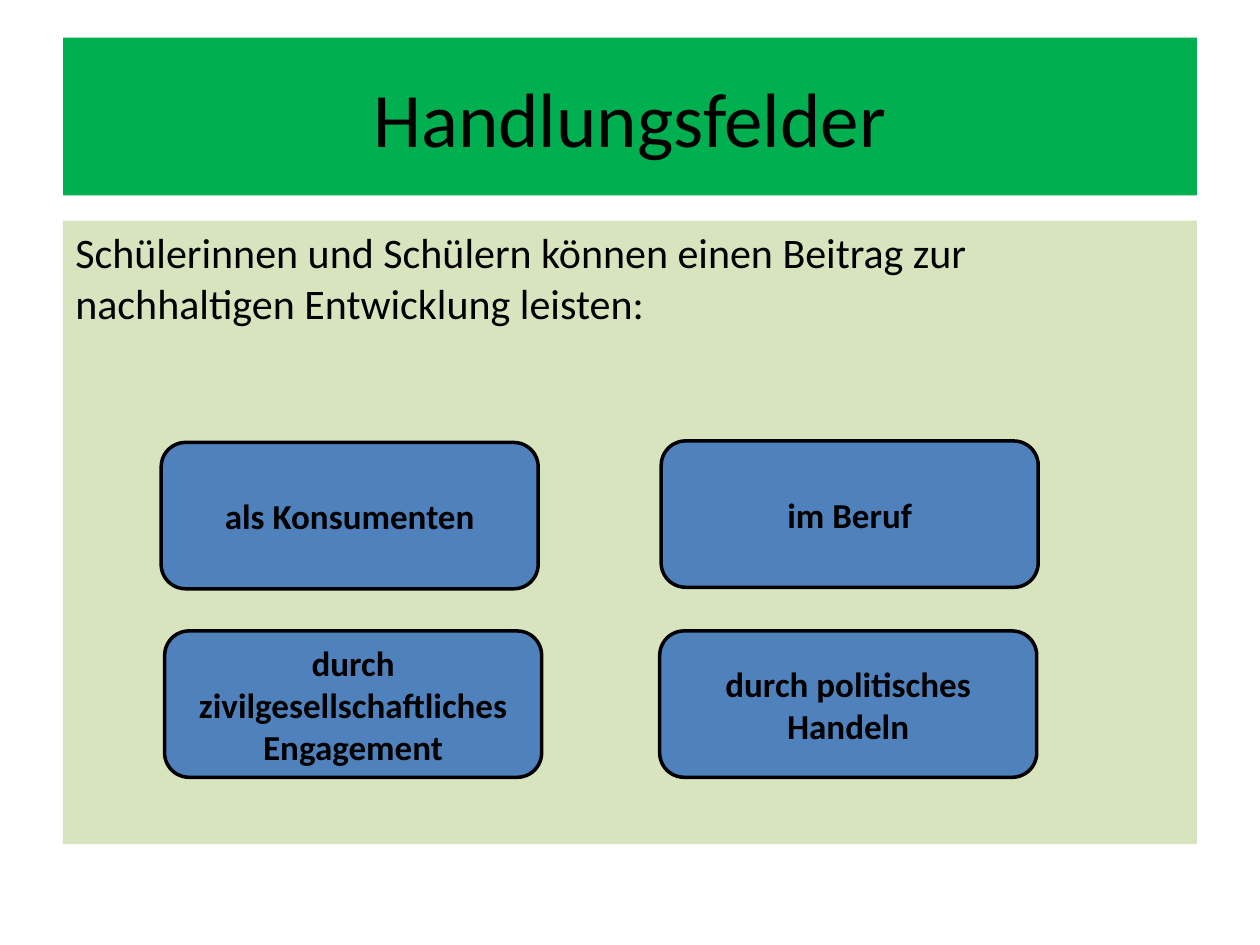
from pptx import Presentation
from pptx.dml.color import RGBColor
from pptx.enum.shapes import MSO_SHAPE
from pptx.enum.text import MSO_ANCHOR, PP_ALIGN
from pptx.util import Cm, Pt

ROUND = MSO_SHAPE.ROUNDED_RECTANGLE
TOP, MIDDLE = MSO_ANCHOR.TOP, MSO_ANCHOR.MIDDLE
LEFT, CENTER = PP_ALIGN.LEFT, PP_ALIGN.CENTER
TITLE_ONLY = 5

FONT = "Calibri"
BLACK, GREEN, PALE, BLUE = "000000", "00B050", "D7E4BD", "4F81BD"
EDGE, WIDE = 1.27, 22.86  # shared by title and panel
BOX_W, BOX_H = 7.6, 2.95

# Left, top and wording of each field of action
FIELDS = [
    (3.25, 8.92, "als Konsumenten"),
    (13.33, 8.89, "im Beruf"),
    (3.32, 12.72, "durch zivilgesellschaftliches Engagement"),
    (13.3, 12.72, "durch politisches Handeln"),
]


def paint(fill, color):
    fill.solid()
    fill.fore_color.rgb = RGBColor.from_string(color)


def write(shape, text, size, align, anchor, bold=False):
    frame = shape.text_frame
    frame.word_wrap = True
    frame.vertical_anchor = anchor
    para = frame.paragraphs[0]
    para.alignment = align
    run = para.add_run()
    run.text = text
    font = run.font
    font.name, font.size, font.bold = FONT, Pt(size), bold
    font.color.rgb = RGBColor.from_string(BLACK)


def add_title(slide, text):
    title = slide.shapes.title
    title.left, title.top = Cm(EDGE), Cm(0.76)
    title.width, title.height = Cm(WIDE), Cm(3.18)
    paint(title.fill, GREEN)
    write(title, text, 44, CENTER, MIDDLE)


def add_panel(slide, text):
    panel = slide.shapes.add_textbox(Cm(EDGE), Cm(4.45), Cm(WIDE), Cm(12.57))
    paint(panel.fill, PALE)
    write(panel, text, 24, LEFT, TOP)


def add_field(slide, left, top, text):
    box = slide.shapes.add_shape(ROUND, Cm(left), Cm(top), Cm(BOX_W), Cm(BOX_H))
    box.shadow.inherit = False
    paint(box.fill, BLUE)
    paint(box.line.fill, BLACK)
    box.line.width = Pt(2)
    write(box, text, 20, CENTER, MIDDLE, bold=True)


def main():
    deck = Presentation()
    deck.slide_width, deck.slide_height = Cm(25.4), Cm(19.05)
    slide = deck.slides.add_slide(deck.slide_layouts[TITLE_ONLY])

    # Heading and introduction
    add_title(slide, "Handlungsfelder")
    add_panel(slide, "Schülerinnen und Schülern können einen Beitrag zur "
                     "nachhaltigen Entwicklung leisten:")

    # Fields of action
    for left, top, text in FIELDS:
        add_field(slide, left, top, text)

    deck.save("out.pptx")


if __name__ == "__main__":
    main()
